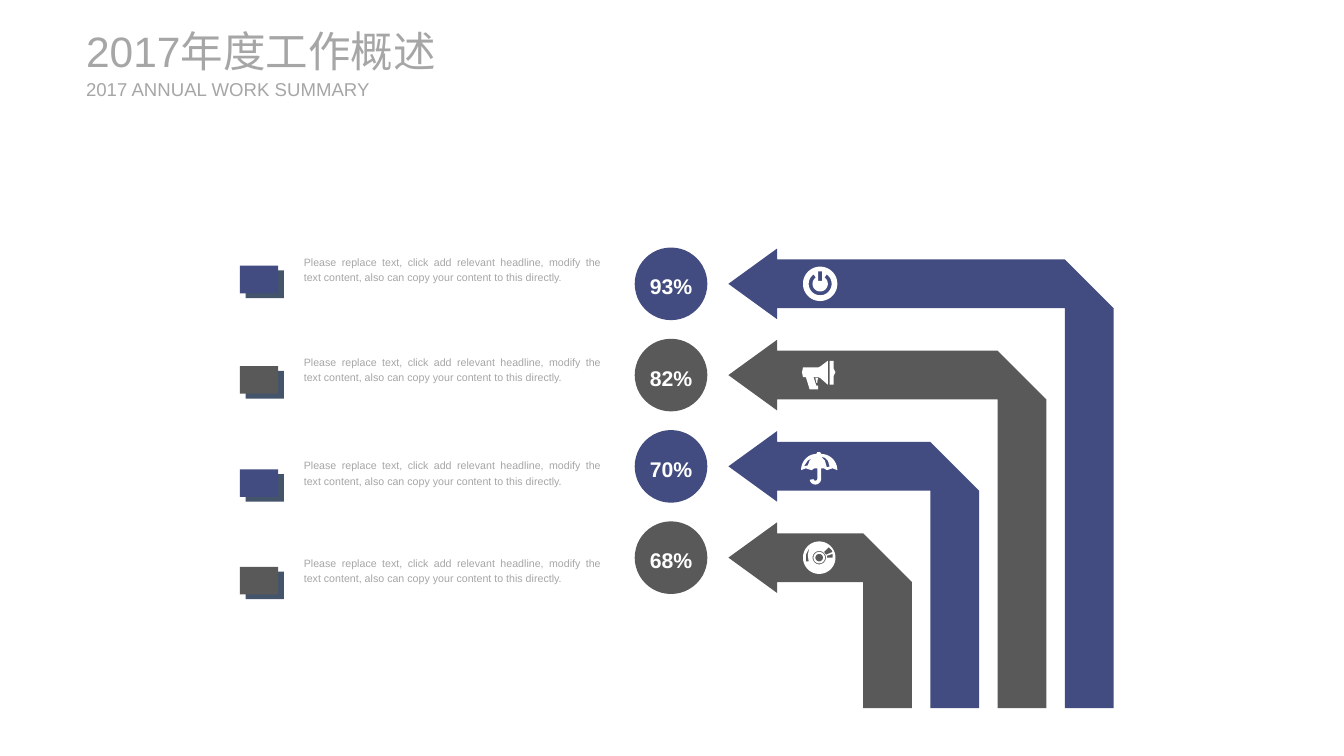
"""Build the annual work summary slide with four bent arrows."""
import math
import pptx
import pptx.util
import pptx.dml.color
import pptx.enum.shapes
import pptx.enum.text

HEAD = "2017年度工作概述"
SUB = "2017 ANNUAL WORK SUMMARY"
NOTE = ("Please replace text, click add relevant headline, modify the text content, "
        "also can copy your content to this directly.")

POWER = [
    [(0, 0, 18, 18, 0, 360)],
    [(-2, -13), (2, -13), (2, -3), (-2, -3)],
    [(0, 0, 12, 12, -55, 235), (0, 0, 8, 8, 235, -55)],
]
HORN = [
    [(-18, -8), (-2, -8), (0, -9), (8, -15), (8, 10), (0, 3), (-2, 2), (-7, 2),
     (-4, 11), (-2, 11), (-2, 15), (-11, 15), (-15, 2), (-18, 2), (-19, -3)],
    [(10, -15), (14, -15), (14, -7), (16, -3), (14, 1), (14, 10), (10, 10)],
    [(-2, 3), (-5, 3), (-4, 8), (-3, 8), (-3, 6)],
]
BROLLY = [
    [(-4, 4, 16, 17, 180, 270), (-3, -15), (0, -15), (1, 4, 17, 17, 270, 360),
     (13, 2), (7, 4), (4, 2), (1, 2), (-5, 13, 6, 6, 0, 170),
     (-5, 13, 2, 2, 170, 0), (-3, 2), (-6, 2), (-9, 4), (-15, 2)],
    [(7, 1), (10, 0), (8, -6), (5, -9), (1, -10), (5, -6)],
    [(-17, 0), (-13, -1), (-11, -6), (-8, -9), (-13, -6)],
]
DISC = [
    [(-1, 0, 17, 17, 0, 360)],
    [(-1, 0, 7, 7, 0, 360)],
    [(-1, 0, 6, 6, 0, 360)],
    [(-1, 0, 4, 4, 0, 360)],
    [(-11, -11), (-15, -3), (-15, 4), (-12, 4), (-13, -3)],
    [(4, -6), (6, -3), (13, -6), (12, -8), (9, -11)],
    [(7, -2), (7, 0), (13, 0), (13, -4)],
]
ROWS = [
    ("93%", 260, "blue", POWER),
    ("82%", 365, "gray", HORN),
    ("70%", 473, "blue", BROLLY),
    ("68%", 575, "gray", DISC),
]
THEME = {
    "font": "Arial", "blue": "424C80", "gray": "595959", "slate": "44546A",
    "pale": "A6A6A6", "white": "FFFFFF",
    "title": 32, "sub": 14, "rate": 16, "note": 8,
}
SCALE = 9144
WIDE, HIGH = 1406, 791
TOP, PITCH = 297, 95.5
DIAL_X, DIAL = 664, 76
TIP, NECK, BARB, BAND = 762, 813, 37, 51
EDGE, STEP, FOOT = 1165, 70.33, 741
ICON_X = 858
NOTE_X, TAG_X = 308, 251

ALIGN = pptx.enum.text.PP_ALIGN
KIND = pptx.enum.shapes.MSO_SHAPE


def emu(px):
    return pptx.util.Emu(round(px * SCALE))


def tint(name):
    return pptx.dml.color.RGBColor.from_string(THEME[name])


def paint(shape, color):
    shape.shadow.inherit = False
    shape.fill.solid()
    shape.fill.fore_color.rgb = tint(color)
    shape.line.fill.background()


def place(shape, x, y, w, h):
    shape.left, shape.top, shape.width, shape.height = map(emu, (x, y, w, h))


def block(slide, kind, x, y, w, h, color):
    shape = slide.shapes.add_shape(kind, *map(emu, (x, y, w, h)))
    paint(shape, color)
    return shape


def write(shape, text, size, color, align, bold=False, inset=0, lead=1.0):
    frame = shape.text_frame
    frame.auto_size = pptx.enum.text.MSO_AUTO_SIZE.NONE
    frame.word_wrap = True
    frame.margin_left = frame.margin_right = emu(inset)
    frame.margin_top = frame.margin_bottom = emu(inset / 2)
    line = frame.paragraphs[0]
    line.alignment, line.line_spacing = align, lead
    line.space_before = pptx.util.Pt(0)
    run = line.add_run()
    run.text = text
    run.font.name, run.font.bold = THEME["font"], bold
    run.font.size = pptx.util.Pt(THEME[size])
    run.font.color.rgb = tint(color)


def trace(loop):
    dots = []
    for part in loop:
        if len(part) == 2:
            dots.append(part)
            continue
        x, y, rx, ry, start, end = part
        count = max(6, round(abs(end - start) / 8))
        for i in range(count + 1):
            turn = math.radians(start + (end - start) * i / count)
            dots.append((x + rx * math.cos(turn), y + ry * math.sin(turn)))
    return dots


def carve(slide, loops, x, y, color):
    pen = None
    for loop in loops:
        dots = [(emu(x + a), emu(y + b)) for a, b in trace(loop)]
        if pen is None:
            pen = slide.shapes.build_freeform(*dots[0])
        else:
            pen.move_to(*dots[0])
        pen.add_line_segments(dots[1:], close=True)
    paint(pen.convert_to_shape(), color)


def arrow(slide, mid, edge, color):
    half, inner = BAND / 2, edge - BAND
    loop = [(TIP, 0), (NECK, -BARB), (NECK, -half), (inner, -half), (edge, half),
            (edge, FOOT - mid), (inner, FOOT - mid), (inner, half),
            (NECK, half), (NECK, BARB)]
    carve(slide, [loop], 0, mid, color)


def main():
    deck = pptx.Presentation()
    deck.slide_width, deck.slide_height = emu(WIDE), emu(HIGH)
    slide = deck.slides.add_slide(deck.slide_layouts[0])
    title, sub = slide.placeholders
    for shape, text, size, box in ((title, HEAD, "title", (90, 26, 432, 54)),
                                   (sub, SUB, "sub", (90, 81, 307, 24))):
        place(shape, *box)
        write(shape, text, size, "pale", ALIGN.LEFT)
        shape.text_frame.vertical_anchor = pptx.enum.text.MSO_ANCHOR.MIDDLE

    for i, (rate, top, color, icon) in enumerate(ROWS):
        mid = TOP + PITCH * i
        dial = block(slide, KIND.OVAL, DIAL_X, mid - DIAL / 2, DIAL, DIAL, color)
        write(dial, rate, "rate", "white", ALIGN.CENTER, bold=True, lead=1.2)
        dial.text_frame.word_wrap = False
        arrow(slide, mid, EDGE - STEP * i, color)
        carve(slide, icon, ICON_X, mid, "white")
        block(slide, KIND.RECTANGLE, TAG_X + 6, top + 23, 40, 29, "slate")
        block(slide, KIND.RECTANGLE, TAG_X, top + 18, 40, 29, color)
        note = slide.shapes.add_textbox(*map(emu, (NOTE_X, top, 331, 41)))
        write(note, NOTE, "note", "pale", ALIGN.JUSTIFY, inset=10, lead=1.2)

    deck.save("out.pptx")


if __name__ == "__main__":
    main()
